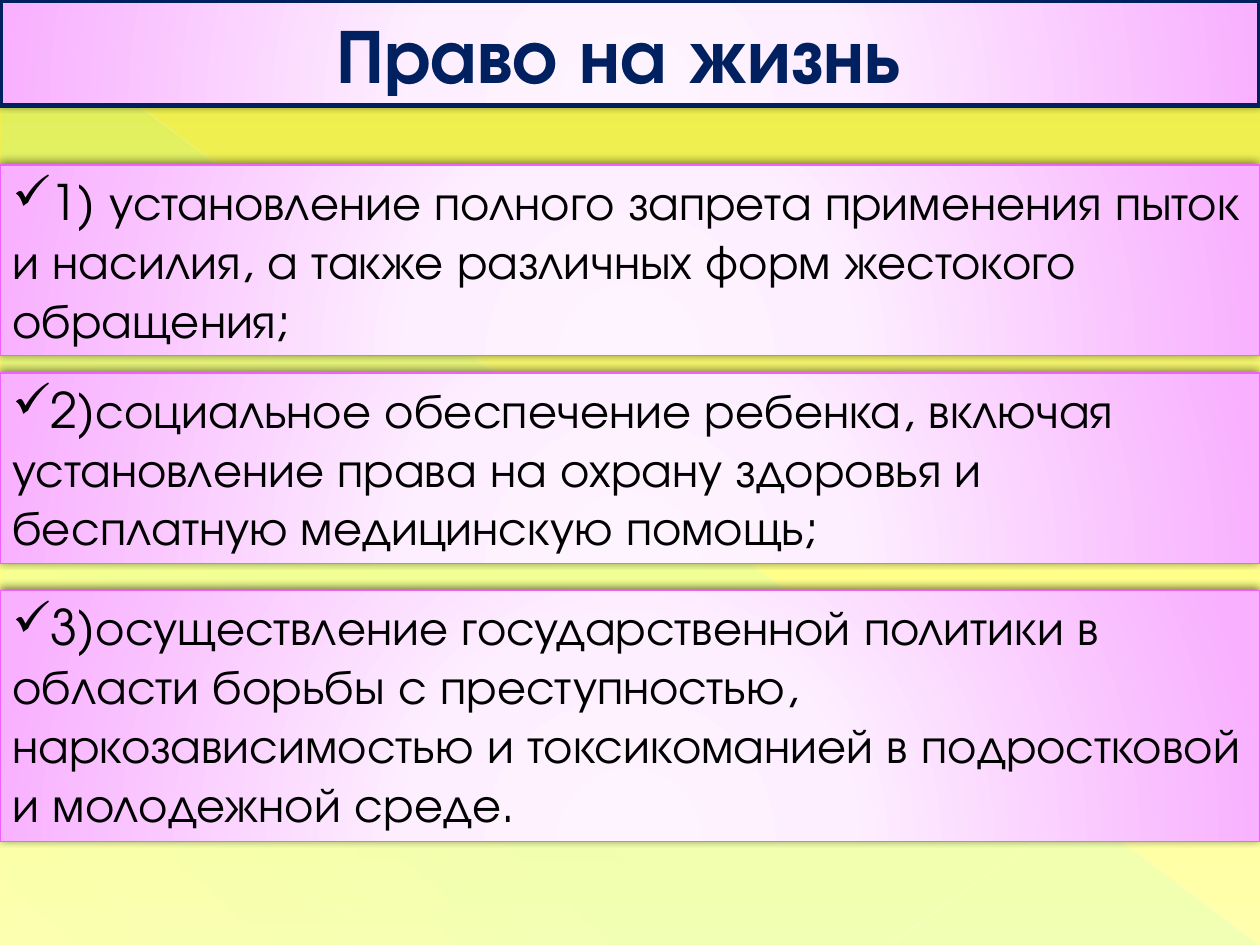
from pptx import Presentation
from pptx.dml.color import RGBColor as RGB
from pptx.enum.shapes import MSO_CONNECTOR as CONN, MSO_SHAPE as SHAPE
from pptx.enum.text import MSO_ANCHOR as ANCHOR, MSO_AUTO_SIZE as AUTO, PP_ALIGN as ALIGN
from pptx.oxml import parse_xml
from pptx.oxml.ns import nsdecls, qn
from pptx.util import Cm, Pt

TITLE = "Право на жизнь "
POINTS = [
    (3.33, 3.84, "1) установление полного запрета применения пыток и насилия, "
                 "а также различных форм жестокого обращения;"),
    (7.52, 3.84, "2)социальное обеспечение ребенка, включая установление права "
                 "на охрану здоровья и бесплатную медицинскую помощь;"),
    (11.91, 5.05, "3)осуществление государственной политики в области борьбы с "
                  "преступностью, наркозависимостью и токсикоманией в подростковой "
                  "и молодежной среде."),
]
RAYS = [
    ((0, 0.03, 25.37, 19.02), "FFFFCF", 0.39, 35),
    ((25.4, 13.74, 17.96, 19.02), "FFFFD4", 0.47, 45),
]
WIDTH, HEIGHT, TITLE_HEIGHT = 25.4, 19.05, 2.13
THEME = {
    "font": "TeX Gyre Adventor", "title_size": 44, "text_size": 28,
    "title": "002060", "text": "000000", "edge": "F060FB",
    "background": [(0, "EAEA3F", 100), (60, "FFFF8A", 100), (100, "FFFFAE", 100)],
    "corner": [(0, "66FFFF", 10), (70, "66FFFF", 8), (100, "66FFFF", 1)],
    "panel": [(0, "FEF4FF", 100), (34, "FDEFFF", 100), (100, "F8B0FF", 100)],
}
RADIAL = ('<a:path path="circle"><a:fillToRect l="50000" t="155000" '
          'r="50000" b="-55000"/></a:path>')


def linear(angle):
    return f'<a:lin ang="{angle * 60000}" scaled="0"/>'


def color_xml(color, alpha):
    return f'<a:srgbClr val="{color}"><a:alpha val="{alpha * 1000}"/></a:srgbClr>'


def set_gradient(fill, parent, stops, shade):
    fill.solid()
    gs = "".join(f'<a:gs pos="{pos * 1000}">{color_xml(color, alpha)}</a:gs>'
                 for pos, color, alpha in stops)
    solid = parent.find(qn("a:solidFill"))
    parent.replace(solid, parse_xml(
        f'<a:gradFill {nsdecls("a")} rotWithShape="1"><a:gsLst>{gs}</a:gsLst>{shade}</a:gradFill>'))


def add_ray(s, ends, color, width, alpha):
    ray = s.shapes.add_connector(CONN.STRAIGHT, *map(Cm, ends))
    ray.line.width = Pt(width)
    ray.line.color.rgb = RGB.from_string(color)
    clr = ray.line._ln.find(".//" + qn("a:srgbClr"))
    clr.append(parse_xml(f'<a:alpha {nsdecls("a")} val="{alpha * 1000}"/>'))
    ray._element.spPr.append(parse_xml(f'<a:effectLst {nsdecls("a")}/>'))


def add_panel(s, top, height, text, size, color, edge, edge_width, title=False):
    sp = s.shapes.add_shape(SHAPE.RECTANGLE, 0, Cm(top), Cm(WIDTH), Cm(height))
    sp.shadow.inherit = False
    spPr = sp._element.spPr
    set_gradient(sp.fill, spPr, THEME["panel"], RADIAL)
    sp.line.color.rgb = RGB.from_string(edge)
    sp.line.width = Pt(edge_width)
    spPr.find(qn("a:effectLst")).append(parse_xml(
        f'<a:outerShdw {nsdecls("a")} blurRad="{Pt(5)}" dist="{Pt(2)}" '
        f'dir="{245 * 60000}" rotWithShape="0">{color_xml("000000", 50)}</a:outerShdw>'))
    tf = sp.text_frame
    tf.word_wrap = True
    tf.auto_size = AUTO.SHAPE_TO_FIT_TEXT
    tf.vertical_anchor = ANCHOR.TOP
    p = tf.paragraphs[0]
    p.alignment = ALIGN.CENTER if title else ALIGN.LEFT
    if not title:
        pPr = p._p.get_or_add_pPr()
        pPr.set("marL", "0")
        pPr.set("indent", "0")
        pPr.append(parse_xml(f'<a:buChar {nsdecls("a")} char="✓"/>'))
    r = p.add_run()
    r.text = text
    r.font.name = THEME["font"]
    r.font.size = Pt(size)
    r.font.bold = title
    r.font.color.rgb = RGB.from_string(color)


def main():
    prs = Presentation()
    prs.slide_width, prs.slide_height = Cm(WIDTH), Cm(HEIGHT)
    s = prs.slides.add_slide(prs.slide_layouts[6])
    fill = s.background.fill
    fill.solid()
    set_gradient(fill, s._element.cSld.bg.bgPr, THEME["background"], linear(90))

    corner = s.shapes.add_shape(SHAPE.RIGHT_TRIANGLE, Cm(0.03), Cm(0.05), Cm(25.35), Cm(19))
    corner.shadow.inherit = False
    set_gradient(corner.fill, corner._element.spPr, THEME["corner"], linear(133))
    corner.line.fill.background()
    for ray in RAYS:
        add_ray(s, *ray)

    add_panel(s, 0, TITLE_HEIGHT, TITLE, THEME["title_size"], THEME["title"],
              THEME["title"], 3, title=True)
    for top, height, text in POINTS:
        add_panel(s, top, height, text, THEME["text_size"], THEME["text"],
                  THEME["edge"], 0.75)
    prs.save("out.pptx")


if __name__ == "__main__":
    main()
